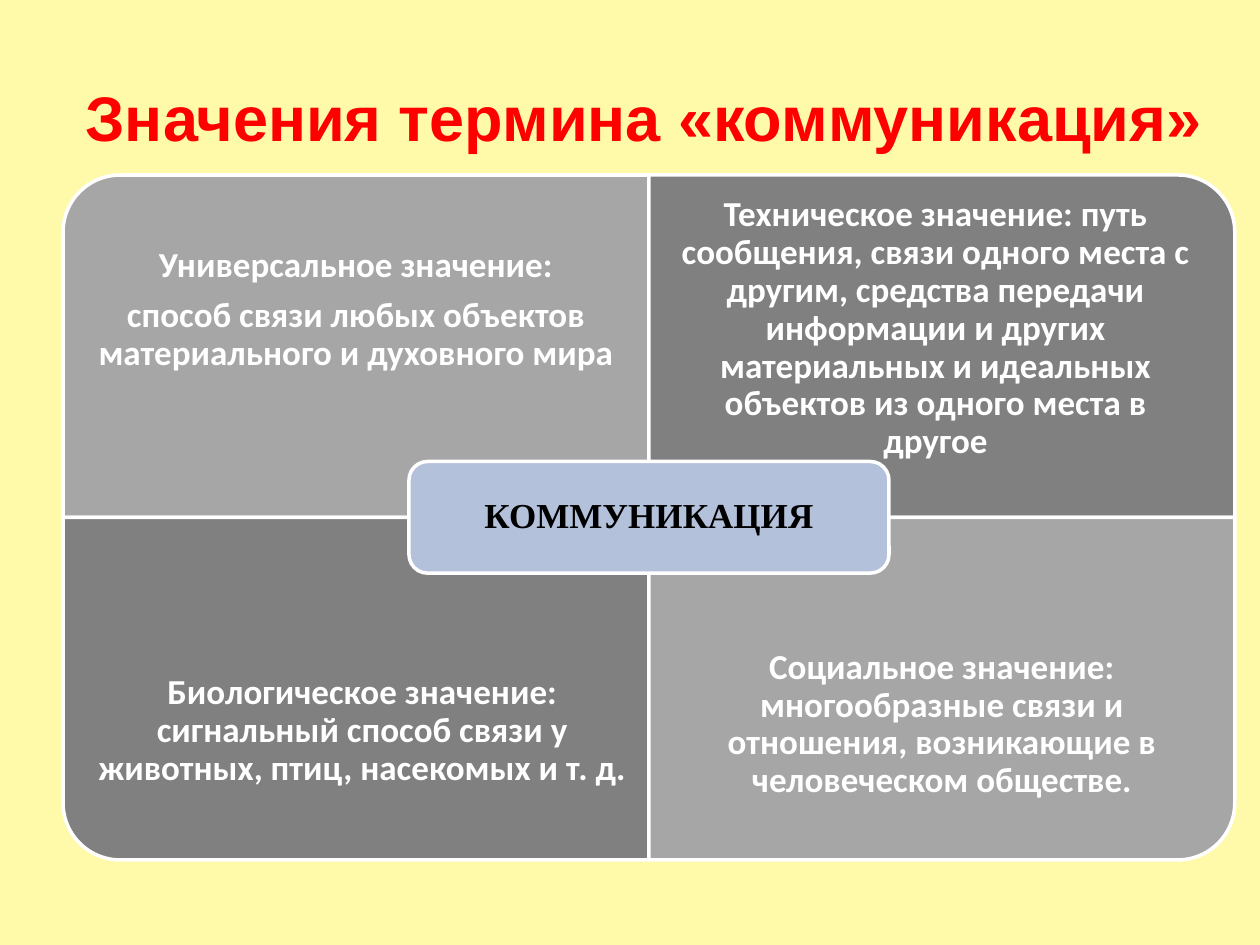
"""Build a slide with four meanings of a term around a central label."""
from dataclasses import dataclass

from pptx import Presentation
from pptx.dml.color import RGBColor
from pptx.enum.shapes import MSO_SHAPE
from pptx.enum.text import MSO_ANCHOR, PP_ALIGN
from pptx.util import Pt

ROUND_ONE = MSO_SHAPE.ROUND_1_RECTANGLE
ROUNDED = MSO_SHAPE.ROUNDED_RECTANGLE
MIDDLE = MSO_ANCHOR.MIDDLE
CENTER = PP_ALIGN.CENTER
LEFT, TOP, WIDTH, HEIGHT = 36, 100, 334.8, 195.7
WHITE, LIGHT, DARK = "FFFFFF", "A6A6A6", "808080"


@dataclass(frozen=True)
class Frame:
    left: float
    top: float
    width: float
    height: float

    def lengths(self) -> tuple:
        return Pt(self.left), Pt(self.top), Pt(self.width), Pt(self.height)


@dataclass(frozen=True)
class Quadrant:
    column: int
    row: int
    rotation: int
    fill: str
    text_frame: Frame
    paragraphs: tuple[str, ...]


QUADRANTS = (
    Quadrant(0, 0, 270, LIGHT, Frame(36, 107.3, 334.8, 139.7), (
        "Универсальное значение:",
        "способ связи любых объектов материального и духовного мира")),
    Quadrant(1, 0, 0, DARK, Frame(370.8, 114.5, 327.6, 147), (
        "Техническое значение: путь сообщения, связи одного места с другим, "
        "средства передачи информации и других материальных и идеальных "
        "объектов из одного места в другое",)),
    Quadrant(0, 1, 180, DARK, Frame(43.2, 344.2, 327.6, 147), (
        "Биологическое значение: сигнальный способ связи у животных, птиц, "
        "насекомых и т. д.",)),
    Quadrant(1, 1, 90, LIGHT, Frame(370.8, 344.2, 334.8, 139.7), (
        "Социальное значение: многообразные связи и отношения, возникающие "
        "в человеческом обществе.",)),
)


def color(value: str) -> RGBColor:
    return RGBColor.from_string(value)


def add_span(para, text: str, font: str, size: float, shade: str) -> None:
    span = para.add_run()
    span.text = text
    span.font.name = font
    span.font.size = Pt(size)
    span.font.bold = True
    span.font.color.rgb = color(shade)


def add_panel(page, kind, frame: Frame, fill: str, rotation: int = 0) -> None:
    panel = page.shapes.add_shape(kind, *frame.lengths())
    panel.rotation = rotation
    panel.shadow.inherit = False
    panel.fill.solid()
    panel.fill.fore_color.rgb = color(fill)
    panel.line.color.rgb = color(WHITE)
    panel.line.width = Pt(2)


def add_caption(page, frame: Frame, paragraphs: tuple[str, ...],
                font: str, shade: str, inset: float) -> None:
    box = page.shapes.add_textbox(*frame.lengths()).text_frame
    box.word_wrap = True
    box.vertical_anchor = MIDDLE
    box.margin_left = box.margin_right = Pt(inset)
    box.margin_top = box.margin_bottom = Pt(0)
    for index, text in enumerate(paragraphs):
        para = box.add_paragraph() if index else box.paragraphs[0]
        para.alignment = CENTER
        para.line_spacing = 0.9
        para.space_after = Pt(7)
        add_span(para, text, font, 20, shade)


def add_quadrant(page, quadrant: Quadrant) -> None:
    sideways = quadrant.rotation % 180 == 90
    width, height = (HEIGHT, WIDTH) if sideways else (WIDTH, HEIGHT)
    left = LEFT + (quadrant.column + 0.5) * WIDTH - width / 2
    top = TOP + (quadrant.row + 0.5) * HEIGHT - height / 2
    add_panel(page, ROUND_ONE, Frame(left, top, width, height),
              quadrant.fill, quadrant.rotation)
    add_caption(page, quadrant.text_frame, quadrant.paragraphs,
                "Calibri", WHITE, 11.5)


def add_title(page, text: str) -> None:
    title = page.shapes.title
    title.left, title.top, title.width, title.height = Frame(
        36, 21.6, 663.8, 90).lengths()
    title.text_frame.vertical_anchor = MIDDLE
    para = title.text_frame.paragraphs[0]
    para.alignment = CENTER
    add_span(para, text, "Arial", 36, "FF0000")


def main() -> None:
    deck = Presentation()
    deck.slide_width, deck.slide_height = Pt(720), Pt(540)
    page = deck.slides.add_slide(deck.slide_layouts[5])
    page.background.fill.solid()
    page.background.fill.fore_color.rgb = color("FFFAA9")
    add_title(page, "Значения термина «коммуникация»")
    for quadrant in QUADRANTS:
        add_quadrant(page, quadrant)
    add_panel(page, ROUNDED, Frame(233.7, 263.7, 274.3, 63.8), "B3C1DB")
    add_caption(page, Frame(236.8, 266.8, 268.1, 57.6), ("КОММУНИКАЦИЯ",),
                "Times New Roman", "000000", 5.8)
    deck.save("out.pptx")


if __name__ == "__main__":
    main()
